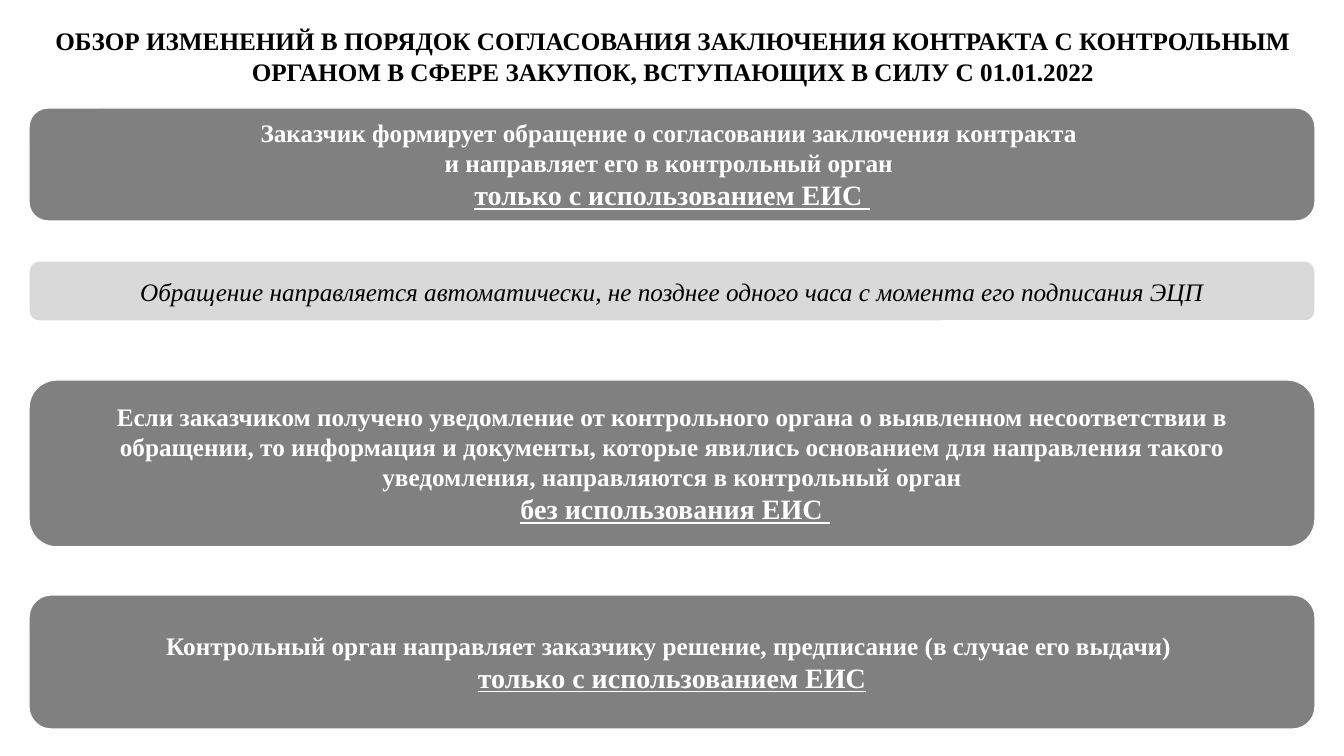
from pptx import Presentation, util as u
from pptx.dml.color import RGBColor
from pptx.enum import shapes, text

PX = 914400 / 100.8
THEME = dict(font="Times New Roman", dark="808080", light="D9D9D9",
             white="FFFFFF", black="000000", body=18, accent=20)


def px(n):
    return u.Emu(round(n * PX))


def write(sp, paragraphs, color):
    """Each paragraph is a list of (text, style); style letters: b, i, u."""
    tf = sp.text_frame
    tf.word_wrap = True
    tf.vertical_anchor = text.MSO_ANCHOR.MIDDLE
    for n, runs in enumerate(paragraphs):
        p = tf.paragraphs[0] if n == 0 else tf.add_paragraph()
        p.alignment = text.PP_ALIGN.CENTER
        for words, style in runs:
            r = p.add_run()
            r.text = words
            r.font.name = THEME["font"]
            r.font.size = u.Pt(THEME["accent" if "u" in style else "body"])
            r.font.bold = "b" in style
            r.font.italic = "i" in style
            r.font.underline = "u" in style
            r.font.color.rgb = RGBColor.from_string(THEME[color])


prs = Presentation()
prs.slide_width, prs.slide_height = px(1344), px(756)
s = prs.slides.add_slide(prs.slide_layouts[6])

# Title
title = s.shapes.add_textbox(px(1), px(4), px(1344), px(104))
write(title, [[("ОБЗОР ИЗМЕНЕНИЙ В ПОРЯДОК СОГЛАСОВАНИЯ ЗАКЛЮЧЕНИЯ КОНТРАКТА "
                "С КОНТРОЛЬНЫМ ОРГАНОМ В СФЕРЕ ЗАКУПОК, ВСТУПАЮЩИХ В СИЛУ "
                "С 01.01.2022", "b")]], "black")

# Steps: top, height, fill, text colour, paragraphs
steps = [
    (108, 113, "dark", "white", [
        [("Заказчик формирует обращение о согласовании заключения контракта ", "b")],
        [("и направляет его в контрольный орган ", "b")],
        [("только с использованием ЕИС ", "bu")]]),
    (261, 60, "light", "black", [
        [("Обращение направляется автоматически, не позднее одного часа "
          "с момента его подписания ЭЦП", "i")]]),
    (380, 167, "dark", "white", [
        [("Если заказчиком получено уведомление от контрольного органа "
          "о выявленном несоответствии в обращении, то информация и документы, "
          "которые явились основанием для направления такого уведомления, "
          "направляются в контрольный орган", "b")],
        [(" ", "b"), ("без использования ЕИС ", "bu")]]),
    (595, 134, "dark", "white", [
        [("Контрольный орган направляет заказчику решение, предписание "
          "(в случае его выдачи) ", "b")],
        [("только с использованием ЕИС", "bu")]]),
]
for top, height, fill, color, paragraphs in steps:
    sp = s.shapes.add_shape(shapes.MSO_SHAPE.ROUNDED_RECTANGLE,
                            px(29), px(top), px(1286), px(height))
    sp.shadow.inherit = False
    sp.fill.solid()
    sp.fill.fore_color.rgb = RGBColor.from_string(THEME[fill])
    sp.line.color.rgb = RGBColor.from_string(THEME["white"])
    sp.line.width = u.Pt(1)
    write(sp, paragraphs, color)

prs.save("out.pptx")
